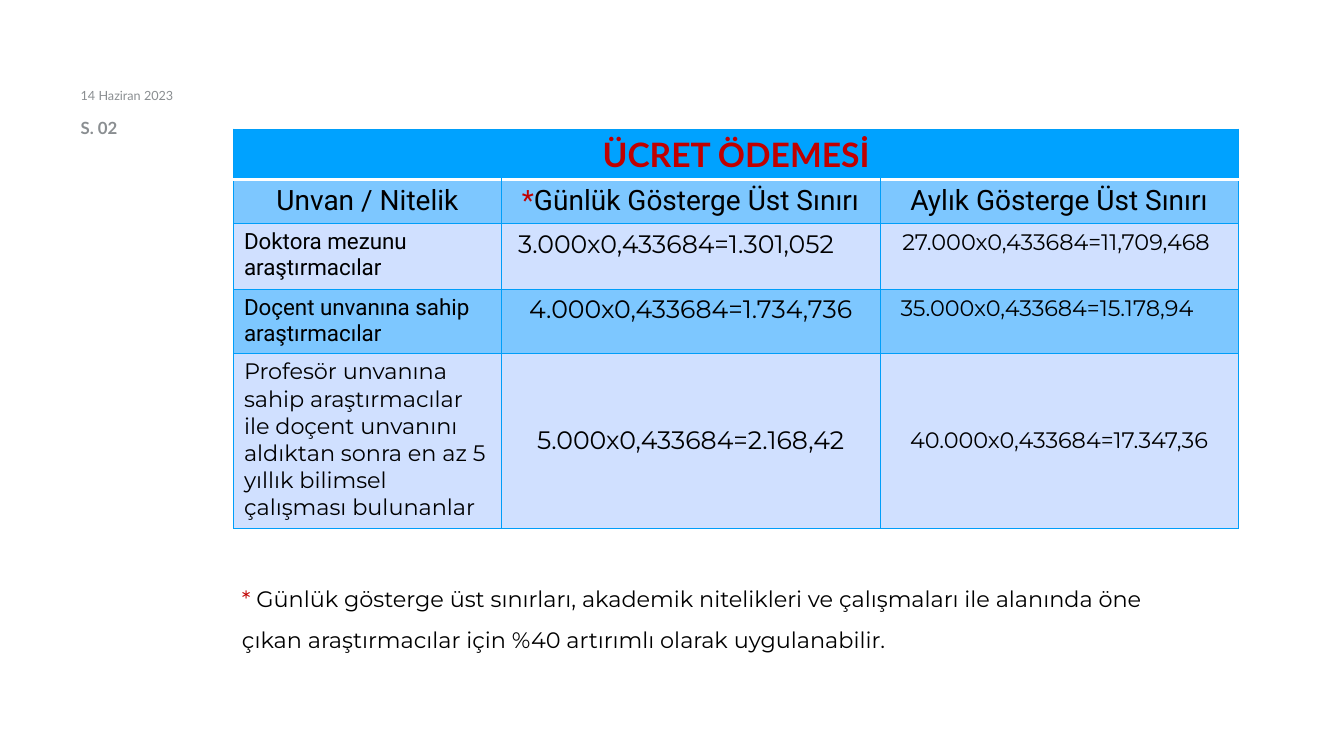
import pptx
import pptx.util
import pptx.dml.color
import pptx.enum.text
import pptx.oxml.ns
from lxml import etree

# Content
COLORS = {"red": "C00000", "black": "000000", "grey": "8A8E91", "white": "FFFFFF",
          "header": "00A2FF", "band": "7DC7FF", "pale": "D0E0FF", "grid": "009EF9"}
DATE = "14 Haziran 2023"
PAGE = "S. 02"
HEADING = "ÜCRET ÖDEMESİ"
COLUMN_HEADS = ["Unvan / Nitelik", "*Günlük Gösterge Üst Sınırı", "Aylık Gösterge Üst Sınırı"]
FEES = [
    ("Doktora mezunu araştırmacılar",
     "3.000x0,433684=1.301,052", "27.000x0,433684=11,709,468"),
    ("Doçent unvanına sahip araştırmacılar",
     "4.000x0,433684=1.734,736", "35.000x0,433684=15.178,94"),
    ("Profesör unvanına sahip araştırmacılar ile doçent unvanını aldıktan sonra "
     "en az 5 yıllık bilimsel çalışması bulunanlar",
     "5.000x0,433684=2.168,42", "40.000x0,433684=17.347,36"),
]
FOOTNOTE = ("* Günlük gösterge üst sınırları, akademik nitelikleri ve çalışmaları ile alanında "
            "öne çıkan araştırmacılar için %40 artırımlı olarak uygulanabilir.")

# Grid, in inches
SLIDE = (13.33, 7.5)
MARGIN_LEFT, TABLE_LEFT, TABLE_TOP = 0.72, 2.32, 1.28
COLUMNS = [2.65, 3.76, 3.55]
ROWS = [0.49, 0.44, 0.65, 0.63, 1.74]
FEE_SIZES = [16, 18, 16]
# Extra right margin that moves a centred amount to the left: (row, column)
RIGHT_SHIFT = {(2, 1): 0.29, (2, 2): 0.06, (3, 2): 0.24}

inch = pptx.util.Inches
ALIGN = pptx.enum.text.PP_ALIGN
ANCHOR = pptx.enum.text.MSO_ANCHOR


def write(frame, text, font="Montserrat", size=16, color="black", bold=False,
          align=ALIGN.LEFT, spacing=1.0):
    """Fill a text frame; a leading asterisk becomes a red run."""
    frame.word_wrap = True
    paragraph = frame.paragraphs[0]
    paragraph.alignment = align
    paragraph.line_spacing = spacing
    parts = [("*", "red"), (text[1:], color)] if text.startswith("*") else [(text, color)]
    for words, tint in parts:
        run = paragraph.add_run()
        run.text = words
        run.font.name = font
        run.font.size = pptx.util.Pt(size)
        run.font.bold = bold
        run.font.color.rgb = pptx.dml.color.RGBColor.from_string(COLORS[tint])


def add_text(slide, box, text, **style):
    frame = slide.shapes.add_textbox(*map(inch, box)).text_frame
    frame.margin_left = frame.margin_right = inch(0.08)
    frame.margin_top = frame.margin_bottom = inch(0.08)
    frame.vertical_anchor = ANCHOR.MIDDLE
    write(frame, text, **style)


def paint(cell, fill, top="grid", bottom="grid"):
    """Draw the four borders, then the fill that must follow them."""
    properties = cell._tc.get_or_add_tcPr()
    qn = pptx.oxml.ns.qn
    for side, color in (("L", "grid"), ("R", "grid"), ("T", top), ("B", bottom)):
        points = 2 if color == "white" else 0.75
        line = etree.SubElement(properties, qn("a:ln" + side), w=str(pptx.util.Pt(points)))
        solid = etree.SubElement(line, qn("a:solidFill"))
        etree.SubElement(solid, qn("a:srgbClr"), val=COLORS[color])
    cell.fill.solid()
    cell.fill.fore_color.rgb = pptx.dml.color.RGBColor.from_string(COLORS[fill])


def add_fee_table(slide):
    table = slide.shapes.add_table(
        len(ROWS), len(COLUMNS), inch(TABLE_LEFT), inch(TABLE_TOP),
        inch(sum(COLUMNS)), inch(sum(ROWS))).table
    table.first_row = table.horz_banding = False
    for column, width in zip(table.columns, COLUMNS):
        column.width = inch(width)
    for row, height in zip(table.rows, ROWS):
        row.height = inch(height)

    # Heading across all columns
    table.cell(0, 0).merge(table.cell(0, len(COLUMNS) - 1))
    for c in range(len(COLUMNS)):
        paint(table.cell(0, c), "header", bottom="white")
    write(table.cell(0, 0).text_frame, HEADING, font="Lato", size=24, color="red",
          bold=True, align=ALIGN.CENTER)

    # Column heads
    for c, head in enumerate(COLUMN_HEADS):
        cell = table.cell(1, c)
        paint(cell, "band", top="white")
        write(cell.text_frame, head, font="Roboto", size=20, align=ALIGN.CENTER)

    # Fees
    last = len(ROWS) - 1
    for r, fee in enumerate(FEES, start=2):
        for c, text in enumerate(fee):
            cell = table.cell(r, c)
            paint(cell, "band" if r % 2 else "pale")
            cell.margin_right = inch(0.1 + RIGHT_SHIFT.get((r, c), 0))
            if r == last and c:
                cell.vertical_anchor = ANCHOR.MIDDLE
            write(cell.text_frame, text, size=FEE_SIZES[c],
                  font="Roboto" if c == 0 and r < last else "Montserrat",
                  align=ALIGN.CENTER if c else ALIGN.LEFT)


def main():
    deck = pptx.Presentation()
    deck.slide_width, deck.slide_height = map(inch, SLIDE)
    slide = deck.slides.add_slide(deck.slide_layouts[6])

    # Date and page number
    add_text(slide, (MARGIN_LEFT, 1.1, 0.92, 0.35), PAGE, font="Lato", size=12,
             color="grey", bold=True, spacing=pptx.util.Pt(13.8))
    add_text(slide, (MARGIN_LEFT, 0.76, 1.29, 0.34), DATE, font="Lato", size=9,
             color="grey", spacing=pptx.util.Pt(13))

    # Table and its footnote
    add_fee_table(slide)
    add_text(slide, (TABLE_LEFT, 5.59, 9.35, 0.97), FOOTNOTE, spacing=1.5)
    deck.save("out.pptx")


if __name__ == "__main__":
    main()
